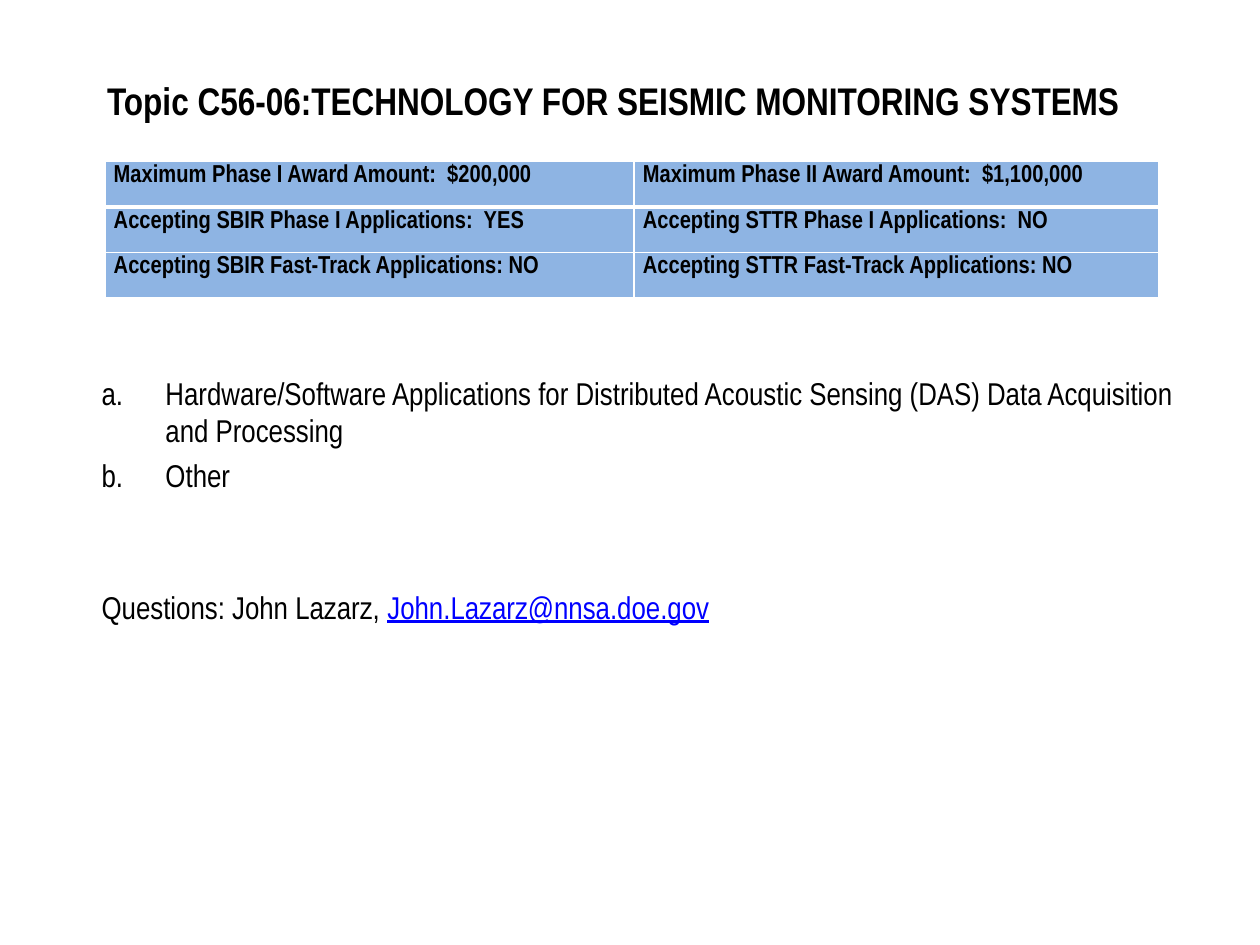
from lxml import etree
from pptx import Presentation
from pptx.dml.color import RGBColor
from pptx.enum.text import MSO_ANCHOR, MSO_AUTO_SIZE, PP_ALIGN
from pptx.oxml.ns import qn
from pptx.util import Pt

LEFT = PP_ALIGN.LEFT
TOP, MIDDLE = MSO_ANCHOR.TOP, MSO_ANCHOR.MIDDLE
NO_FIT = MSO_AUTO_SIZE.NONE
TITLE_ONLY = 5
FONT, BLACK, WHITE, BLUE, LINK = "Arial Narrow", "000000", "FFFFFF", "8EB4E3", "0000FF"

TITLE = "Topic C56-06:TECHNOLOGY FOR SEISMIC MONITORING SYSTEMS"
AWARDS = [
    ("Maximum Phase I Award Amount:  $200,000", "Maximum Phase II Award Amount:  $1,100,000"),
    ("Accepting SBIR Phase I Applications:  YES", "Accepting STTR Phase I Applications:  NO"),
    ("Accepting SBIR Fast-Track Applications: NO", "Accepting STTR Fast-Track Applications: NO"),
]
SUBTOPICS = [
    "Hardware/Software Applications for Distributed Acoustic Sensing (DAS) "
    "Data Acquisition and Processing",
    "Other",
]


def colour(value):
    """Turn a hex string into a colour."""
    return RGBColor.from_string(value)


def apply(target, formats):
    """Set each attribute of the target from a dict."""
    for name, value in formats.items():
        setattr(target, name, value)


def add_run(paragraph, text, size, hex_colour=BLACK, **formats):
    """Append a run in the slide font."""
    run = paragraph.add_run()
    run.text = text
    apply(run.font, {"name": FONT, "size": Pt(size), **formats})
    run.font.color.rgb = colour(hex_colour)


def place_title(slide, left, top, width, height):
    """Move the title placeholder into its box and fill it."""
    title = slide.shapes.title
    apply(title, {"left": Pt(left), "top": Pt(top), "width": Pt(width), "height": Pt(height)})
    apply(title.text_frame, {"vertical_anchor": MIDDLE, "word_wrap": True, "auto_size": NO_FIT})
    heading = title.text_frame.paragraphs[0]
    heading.alignment = LEFT
    add_run(heading, TITLE, 22, bold=True)


def add_borders(cell, widths):
    """Draw white borders of the given widths round a cell."""
    properties = cell._tc.get_or_add_tcPr()
    for position, (side, width) in enumerate(widths.items()):
        line = etree.Element(qn(f"a:ln{side}"), w=str(Pt(width)))
        fill = etree.SubElement(line, qn("a:solidFill"))
        etree.SubElement(fill, qn("a:srgbClr"), val=WHITE)
        properties.insert(position, line)


def place_awards(slide, left, top, width, height):
    """Add the table of award limits and accepted applications."""
    rows, columns = len(AWARDS), len(AWARDS[0])
    awards = slide.shapes.add_table(
        rows, columns, Pt(left), Pt(top), Pt(width), Pt(height)).table
    apply(awards, {"first_row": False, "horz_banding": False})
    first_width = 302.4
    for column, column_width in zip(awards.columns, (first_width, width - first_width)):
        column.width = Pt(column_width)
    cell_format = {"margin_left": Pt(5), "margin_right": Pt(5), "margin_top": 0,
                   "margin_bottom": 0, "vertical_anchor": TOP}
    for row, entries in enumerate(AWARDS):
        for column, entry in enumerate(entries):
            cell = awards.cell(row, column)
            apply(cell, cell_format)
            cell.fill.solid()
            cell.fill.fore_color.rgb = colour(BLUE)
            add_borders(cell, {"L": 1, "R": 1, "T": 3 if row == 1 else 1,
                               "B": 3 if row == 0 else 1})
            paragraph = cell.text_frame.paragraphs[0]
            paragraph.line_spacing = 1.15
            add_run(paragraph, entry, 14, bold=True)


def place_subtopics(slide, left, top, width, height):
    """Add the lettered subtopics and the contact line."""
    frame = slide.shapes.add_textbox(Pt(left), Pt(top), Pt(width), Pt(height)).text_frame
    apply(frame, {"word_wrap": True, "auto_size": NO_FIT, "vertical_anchor": TOP})
    for index, subtopic in enumerate(SUBTOPICS):
        paragraph = frame.add_paragraph() if index else frame.paragraphs[0]
        paragraph.space_before = Pt(3.6)
        properties = paragraph._p.get_or_add_pPr()
        properties.set("marL", str(Pt(36.5)))
        properties.set("indent", str(Pt(-36.5)))
        etree.SubElement(properties, qn("a:buFont"), typeface="+mj-lt")
        etree.SubElement(properties, qn("a:buAutoNum"), type="alphaLcPeriod")
        add_run(paragraph, subtopic, 18)
    contact = frame.add_paragraph()
    contact.space_before = Pt(54)
    add_run(contact, "Questions: John Lazarz, ", 18)
    add_run(contact, "John.Lazarz@nnsa.doe.gov", 18, LINK, underline=True)


def main():
    """Build the topic slide and save it."""
    deck = Presentation()
    apply(deck, {"slide_width": Pt(720), "slide_height": Pt(540)})
    slide = deck.slides.add_slide(deck.slide_layouts[TITLE_ONLY])
    place_title(slide, 54, 24, 642, 66)
    place_subtopics(slide, 51, 210, 642, 198)
    place_awards(slide, 60, 92.4, 602.4, 77.8)
    deck.save("out.pptx")


if __name__ == "__main__":
    main()
